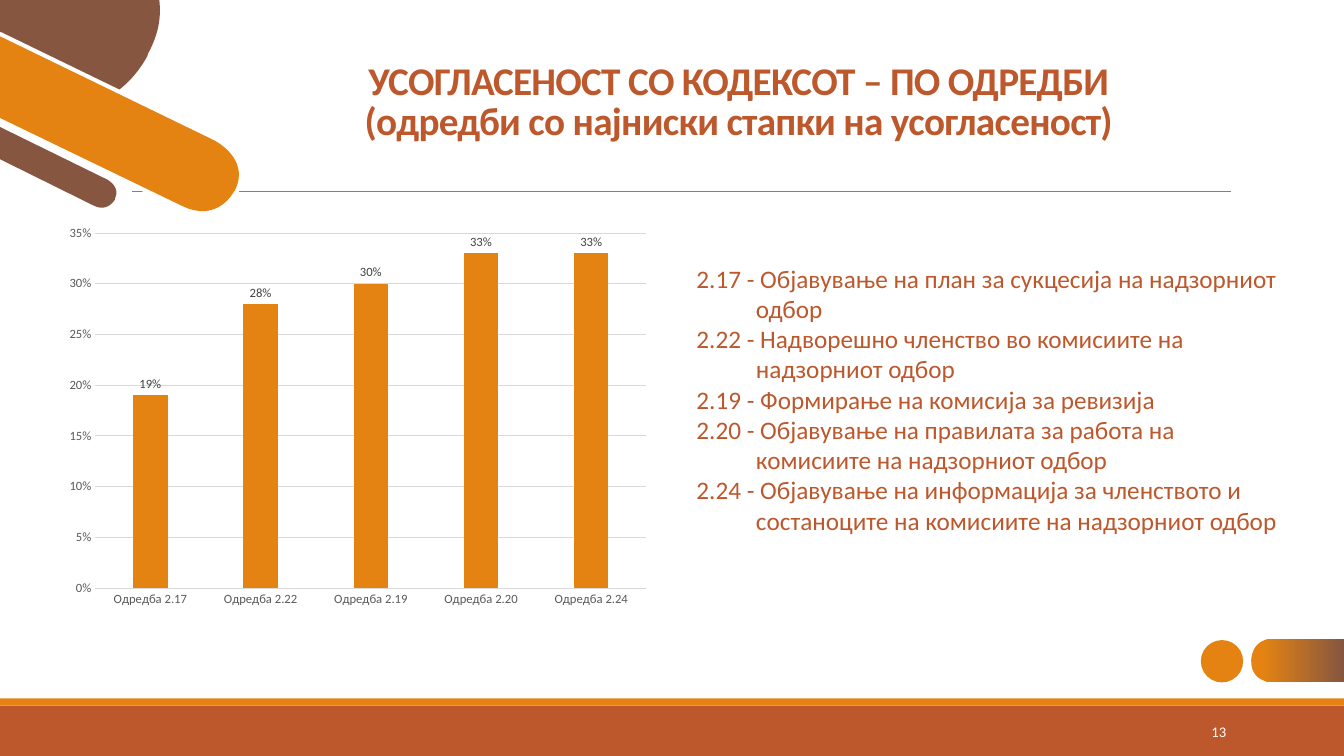
from dataclasses import dataclass

from lxml import etree
from pptx import Presentation
from pptx.chart.data import CategoryChartData
from pptx.dml.color import RGBColor
from pptx.enum.chart import XL_CHART_TYPE, XL_LABEL_POSITION, XL_TICK_MARK
from pptx.enum.shapes import MSO_CONNECTOR, MSO_SHAPE
from pptx.enum.text import MSO_ANCHOR, PP_ALIGN
from pptx.oxml.ns import qn
from pptx.util import Inches, Pt

COLUMNS = XL_CHART_TYPE.COLUMN_CLUSTERED
OUTSIDE = XL_LABEL_POSITION.OUTSIDE_END
NO_TICK = XL_TICK_MARK.NONE
STRAIGHT = MSO_CONNECTOR.STRAIGHT
RECTANGLE, OVAL = MSO_SHAPE.RECTANGLE, MSO_SHAPE.OVAL
TOP, MIDDLE, BOTTOM = MSO_ANCHOR.TOP, MSO_ANCHOR.MIDDLE, MSO_ANCHOR.BOTTOM
LEFT, CENTER, RIGHT = PP_ALIGN.LEFT, PP_ALIGN.CENTER, PP_ALIGN.RIGHT


@dataclass(frozen=True)
class Theme:
    font: str = "Calibri"
    rust: RGBColor = RGBColor(0xBD, 0x58, 0x2C)
    orange: RGBColor = RGBColor(0xE4, 0x83, 0x12)
    brown: RGBColor = RGBColor(0x86, 0x56, 0x40)
    white: RGBColor = RGBColor(0xFF, 0xFF, 0xFF)
    rule: RGBColor = RGBColor(0x80, 0x80, 0x80)
    grid: RGBColor = RGBColor(0xD9, 0xD9, 0xD9)
    axis_text: RGBColor = RGBColor(0x59, 0x59, 0x59)
    label_text: RGBColor = RGBColor(0x40, 0x40, 0x40)
    title_size: float = 28
    body_size: float = 18
    number_size: float = 10.5
    chart_size: float = 9


THEME = Theme()

TITLE = [
    "УСОГЛАСЕНОСТ СО КОДЕКСОТ – ПО ОДРЕДБИ",
    "(одредби со најниски стапки на усогласеност)",
]
PROVISIONS = [
    ("2.17", 0.19, "Објавување на план за сукцесија на надзорниот одбор"),
    ("2.22", 0.28, "Надворешно членство во комисиите на надзорниот одбор"),
    ("2.19", 0.30, "Формирање на комисија за ревизија"),
    ("2.20", 0.33, "Објавување на правилата за работа на комисиите на надзорниот одбор"),
    ("2.24", 0.33, "Објавување на информација за членството и состаноците "
                   "на комисиите на надзорниот одбор"),
]

# Outlines in inches: a pair is a straight step, six numbers a Bézier step.
BROWN_DISC = [(0, 0), (1.58, 0), (1.6, 0.15, 1.58, 0.33, 1.47, 0.53), (1.46, 0.56),
              (1.46, 0.56, 1.36, 0.76, 1.17, 0.9), (0, 0.34)]
BROWN_BAR = [(0, 1.26), (1.06, 1.78), (1.06, 1.78, 1.2, 1.85, 1.14, 1.97), (1.14, 1.98),
             (1.14, 1.98, 1.07, 2.11, 0.93, 2.04), (0, 1.58)]
ORANGE_BAR = [(0, 0.36), (2.12, 1.39), (2.12, 1.39, 2.49, 1.57, 2.33, 1.89), (2.32, 1.9),
              (2.32, 1.9, 2.16, 2.22, 1.8, 2.04), (0, 1.17)]
NUMBER_TAB = [(13.33, 6.34), (13.33, 6.77), (12.62, 6.77),
              (12.62, 6.77, 12.41, 6.77, 12.41, 6.56), (12.41, 6.55),
              (12.41, 6.55, 12.41, 6.34, 12.62, 6.34)]


def flatten(outline, steps=16):
    """Turn an outline with Bézier steps into a list of points."""
    points = []
    for step in outline:
        if len(step) == 2:
            points.append(step)
            continue
        start, handles = points[-1], (step[0:2], step[2:4], step[4:6])
        for index in range(1, steps + 1):
            t = index / steps
            weights = ((1 - t) ** 3, 3 * t * (1 - t) ** 2, 3 * t * t * (1 - t), t ** 3)
            corners = (start, *handles)
            points.append(tuple(sum(weight * corner[axis]
                                    for weight, corner in zip(weights, corners))
                                for axis in (0, 1)))
    return points


def paint(shape, color):
    shape.shadow.inherit = False
    shape.fill.solid()
    shape.fill.fore_color.rgb = color
    shape.line.fill.background()


def add_block(page, kind, left, top, width, height, color):
    block = page.shapes.add_shape(kind, Inches(left), Inches(top),
                                  Inches(width), Inches(height))
    paint(block, color)


def add_outline(page, outline, color):
    points = [(Inches(x), Inches(y)) for x, y in flatten(outline)]
    builder = page.shapes.build_freeform(*points[0])
    builder.add_line_segments(points[1:], close=True)
    shape = builder.convert_to_shape()
    paint(shape, color)
    return shape


def add_rule(page, left, right, top):
    rule = page.shapes.add_connector(STRAIGHT, Inches(left), Inches(top),
                                     Inches(right), Inches(top))
    rule.line.color.rgb = THEME.rule
    rule.line.width = Pt(0.5)
    etree.SubElement(rule._element.spPr, qn("a:effectLst"))


def style_font(font, size, color, bold=False):
    font.name = THEME.font
    font.size = Pt(size)
    font.bold = bold
    font.color.rgb = color


def add_text(page, lines, left, top, width, height, *, size, color, bold=False,
             align=LEFT, anchor=TOP, line_spacing=None, hanging=0, tracking=0):
    box = page.shapes.add_textbox(Inches(left), Inches(top), Inches(width), Inches(height))
    frame = box.text_frame
    frame.word_wrap = True
    frame.vertical_anchor = anchor
    for index, line in enumerate(lines):
        para = frame.add_paragraph() if index else frame.paragraphs[0]
        para.alignment = align
        para.line_spacing = line_spacing
        if hanging:
            properties = para._p.get_or_add_pPr()
            properties.set("marL", str(Inches(hanging)))
            properties.set("indent", str(-Inches(hanging)))
        span = para.add_run()
        span.text = line
        style_font(span.font, size, color, bold)
        if tracking:
            span._r.get_or_add_rPr().set("spc", str(round(tracking * 100)))


def add_corner_art(page):
    add_outline(page, BROWN_DISC, THEME.brown)
    add_outline(page, BROWN_BAR, THEME.brown)
    halo = add_outline(page, ORANGE_BAR, THEME.white)
    halo.line.color.rgb = THEME.white
    halo.line.width = Pt(6)
    add_outline(page, ORANGE_BAR, THEME.orange)


def add_number_tab(page):
    fill = add_outline(page, NUMBER_TAB, THEME.orange).fill
    fill.gradient()
    fill.gradient_angle = 0
    stops = ((0.12, THEME.orange), (1, THEME.brown))
    for stop, (position, color) in zip(fill.gradient_stops, stops):
        stop.position = position
        stop.color.rgb = color


def add_rate_chart(page):
    data = CategoryChartData(number_format="0%")
    data.categories = [f"Одредба {code}" for code, _, _ in PROVISIONS]
    data.add_series("Series 1", [rate for _, rate, _ in PROVISIONS])
    chart = page.shapes.add_chart(COLUMNS, Inches(0.57), Inches(2.16),
                                  Inches(5.96), Inches(3.94), data).chart
    chart.has_legend = chart.has_title = False
    style_font(chart.font, THEME.chart_size, THEME.axis_text)

    for axis in (chart.category_axis, chart.value_axis):
        axis.major_tick_mark = axis.minor_tick_mark = NO_TICK
    values = chart.value_axis
    values.minimum_scale, values.maximum_scale, values.major_unit = 0, 0.35, 0.05
    values.tick_labels.number_format = "0%"
    values.tick_labels.number_format_is_linked = False
    values.format.line.fill.background()
    for line in (chart.category_axis.format.line, values.major_gridlines.format.line):
        line.color.rgb = THEME.grid
        line.width = Pt(0.75)

    plot = chart.plots[0]
    plot.gap_width, plot.overlap, plot.vary_by_categories = 219, -27, False
    fill = plot.series[0].format.fill
    fill.solid()
    fill.fore_color.rgb = THEME.orange
    plot.has_data_labels = True
    labels = plot.data_labels
    labels.show_value, labels.position = True, OUTSIDE
    labels.number_format, labels.number_format_is_linked = "0%", False
    style_font(labels.font, THEME.chart_size, THEME.label_text)


def main():
    deck = Presentation()
    deck.slide_width, deck.slide_height = Inches(13.33), Inches(7.5)
    page = deck.slides.add_slide(deck.slide_layouts[6])

    add_block(page, RECTANGLE, 0, 7, 13.33, 0.5, THEME.rust)
    add_block(page, RECTANGLE, 0, 6.93, 13.33, 0.07, THEME.orange)
    add_rule(page, 1.31, 12.21, 1.9)
    add_block(page, OVAL, 11.91, 6.35, 0.42, 0.42, THEME.orange)
    add_number_tab(page)
    add_corner_art(page)
    add_text(page, ["13"], 10.83, 7.06, 1.43, 0.4, size=THEME.number_size,
             color=THEME.white, align=RIGHT, anchor=MIDDLE)
    add_text(page, TITLE, 1.19, 0.52, 12.27, 0.95, size=THEME.title_size, color=THEME.rust,
             bold=True, align=CENTER, anchor=BOTTOM, line_spacing=0.85, tracking=-0.5)
    add_text(page, [f"{code} - {text}" for code, _, text in PROVISIONS],
             6.81, 2.56, 6.13, 3.13, size=THEME.body_size, color=THEME.rust, hanging=0.59)
    add_rate_chart(page)
    deck.save("out.pptx")


if __name__ == "__main__":
    main()
